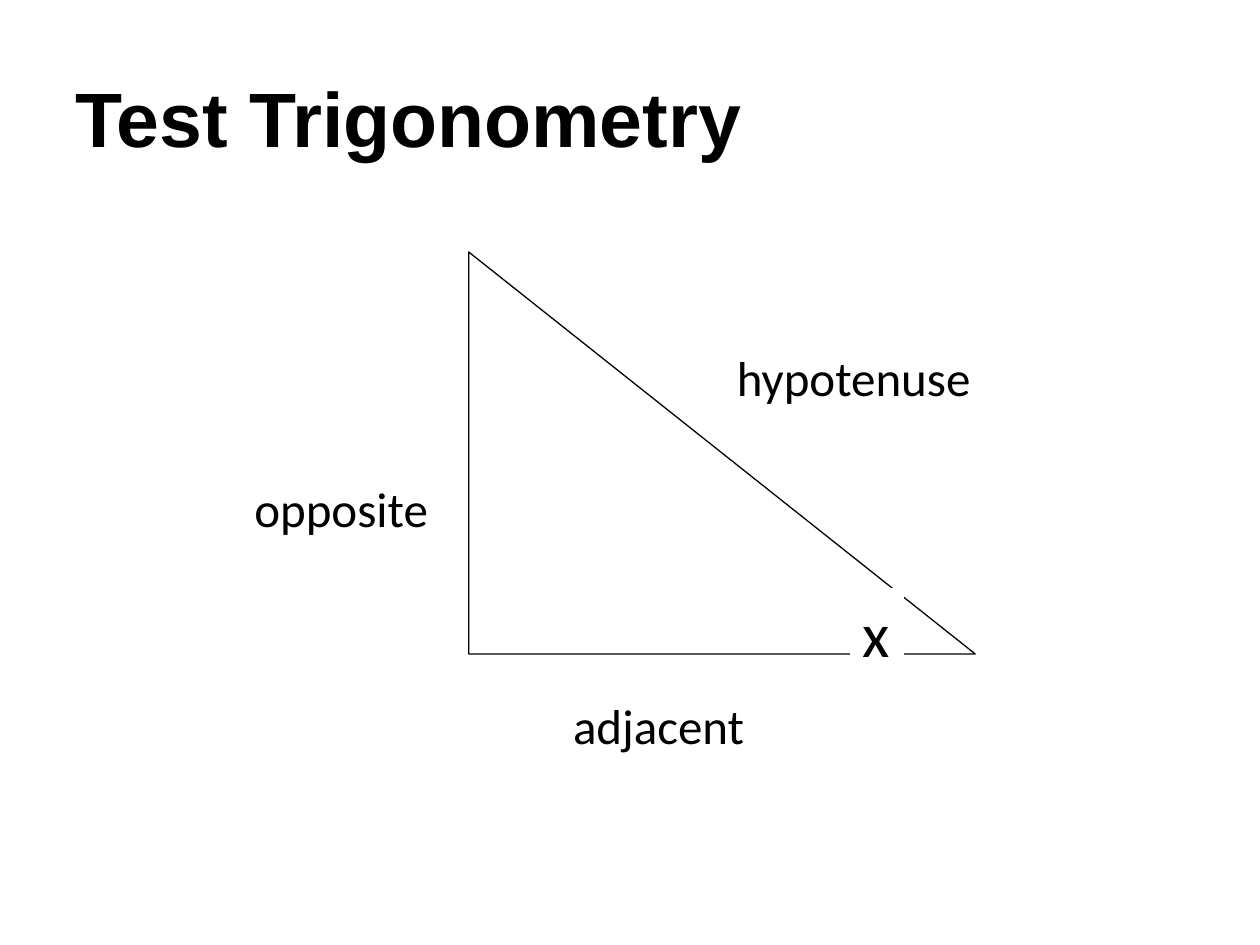
from pptx import Presentation
from pptx import util as u
from pptx.dml.color import RGBColor
from pptx.enum import shapes, text

BLACK = "000000"
WHITE = "FFFFFF"


def color(hex_value):
    return RGBColor.from_string(hex_value)


def write(shape, content, font="Calibri", size=28, bold=False,
          anchor=text.MSO_ANCHOR.TOP, space_after=0):
    frame = shape.text_frame
    frame.word_wrap = True
    frame.vertical_anchor = anchor
    paragraph = frame.paragraphs[0]
    paragraph.alignment = text.PP_ALIGN.LEFT
    paragraph.space_after = u.Pt(space_after)
    run = paragraph.add_run()
    run.text = content
    run.font.name = font
    run.font.size = u.Pt(size)
    run.font.bold = bold
    run.font.color.rgb = color(BLACK)


class TriangleSlide:
    """Holds the slide, its diagram group and the shared style."""

    line_width = u.Pt(0.75)

    def __init__(self, presentation):
        self.slide = presentation.slides.add_slide(presentation.slide_layouts[6])
        self.diagram = None

    def title(self, content, *box):
        shape = self.slide.shapes.add_textbox(*map(u.Inches, box))
        write(shape, content, font="Arial", size=44, bold=True,
              anchor=text.MSO_ANCHOR.MIDDLE)

    def start_diagram(self):
        self.diagram = self.slide.shapes.add_group_shape()

    def outline(self, kind, box, line):
        """Add a white preset shape with a thin line to the diagram."""
        shape = self.diagram.shapes.add_shape(kind, *map(u.Inches, box))
        shape.shadow.inherit = False
        shape.fill.solid()
        shape.fill.fore_color.rgb = color(WHITE)
        shape.line.color.rgb = color(line)
        shape.line.width = self.line_width
        return shape

    def triangle(self, *box):
        self.outline(shapes.MSO_SHAPE.RIGHT_TRIANGLE, box, BLACK)

    def label(self, content, *box, size=28):
        shape = self.outline(shapes.MSO_SHAPE.RECTANGLE, box, WHITE)
        write(shape, content, size=size, space_after=10)


def main():
    presentation = Presentation()
    presentation.slide_width = u.Inches(10)
    presentation.slide_height = u.Inches(7.5)

    page = TriangleSlide(presentation)
    page.title("Test Trigonometry", 0.5, 0.3, 9, 1.25)
    page.start_diagram()
    page.triangle(3.72, 2, 4.02, 3.19)
    page.label("hypotenuse", 5.75, 2.71, 2.35, 0.69)
    page.label("adjacent", 4.45, 5.47, 1.86, 0.69)
    page.label("opposite", 1.92, 3.75, 1.75, 0.56)
    page.label("x", 6.75, 4.67, 0.42, 0.54, size=36)

    presentation.save("out.pptx")


if __name__ == "__main__":
    main()
